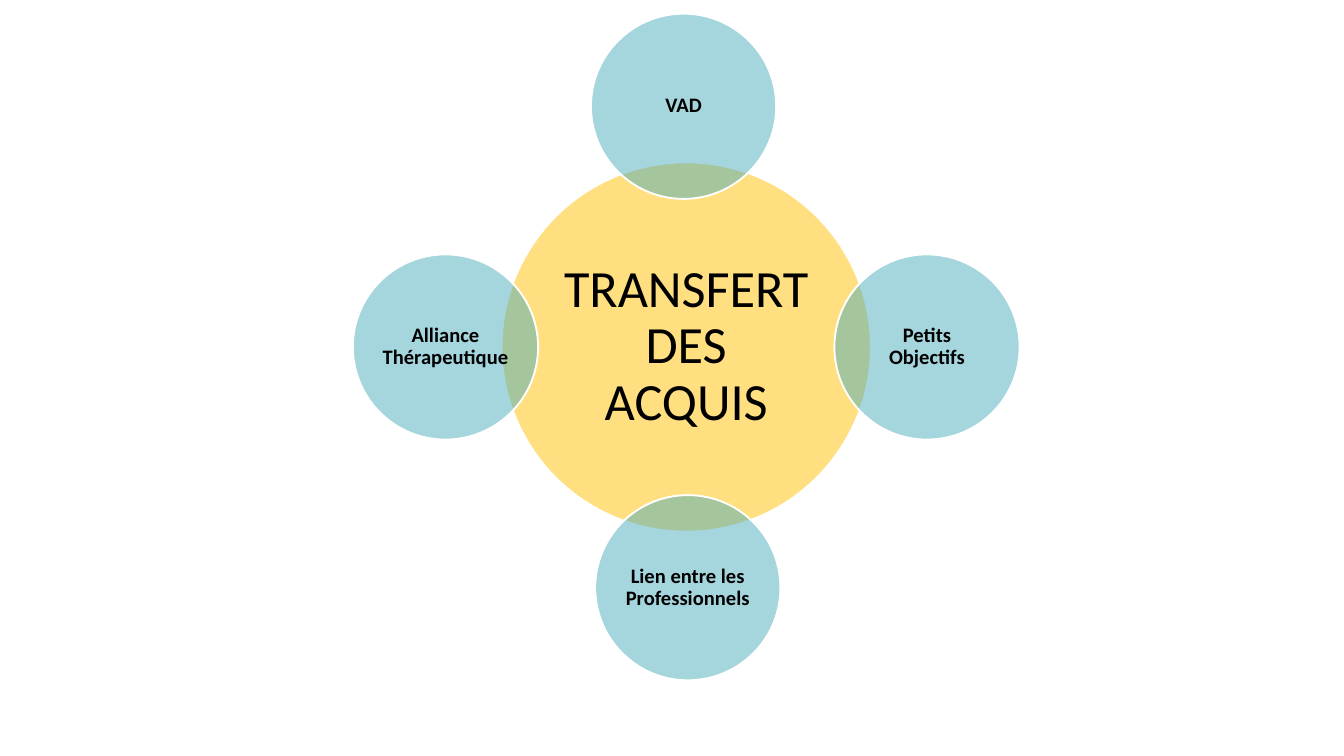
from lxml import etree
from pptx import Presentation
from pptx.dml.color import RGBColor
from pptx.enum import shapes, text
from pptx.oxml import ns
from pptx.util import Cm, Pt

YELLOW = RGBColor(0xFF, 0xC0, 0x00)
TEAL = RGBColor(0x4C, 0xAC, 0xBC)
WHITE = RGBColor(0xFF, 0xFF, 0xFF)
BLACK = RGBColor(0x00, 0x00, 0x00)

CENTER_X, CENTER_Y = 12.97, 6.56
ORBIT = 4.55
HUB_DIAMETER = 6.98
SATELLITE_DIAMETER = 3.5
SATELLITES = [
    ("VAD", -0.05, -ORBIT),
    ("Petits Objectifs", ORBIT, 0),
    ("Lien entre les Professionnels", 0.03, ORBIT),
    ("Alliance Thérapeutique", -ORBIT, 0),
]


class RadialDiagram:
    font_name = "Calibri"
    opacity = 50

    def __init__(self, slide):
        self.slide = slide

    def circle(self, label, x, y, diameter, color, size, bold, inset):
        shape = self.slide.shapes.add_shape(
            shapes.MSO_SHAPE.OVAL,
            Cm(x - diameter / 2), Cm(y - diameter / 2), Cm(diameter), Cm(diameter),
        )
        shape.shadow.inherit = False
        shape.fill.solid()
        shape.fill.fore_color.rgb = color
        self.make_translucent(shape)
        shape.line.color.rgb = WHITE
        shape.line.width = Pt(1)
        self.label(shape.text_frame, label, size, bold, inset)

    def make_translucent(self, shape):
        color = shape.fill._xPr.find(ns.qn("a:solidFill"))[0]
        etree.SubElement(color, ns.qn("a:alpha"), val=str(self.opacity * 1000))

    def label(self, frame, label, size, bold, inset):
        frame.text = label
        frame.word_wrap = True
        frame.vertical_anchor = text.MSO_ANCHOR.MIDDLE
        frame.margin_left = frame.margin_right = Cm(inset)
        frame.margin_top = frame.margin_bottom = Cm(inset)
        paragraph = frame.paragraphs[0]
        paragraph.alignment = text.PP_ALIGN.CENTER
        paragraph.line_spacing = 0.9
        for run in paragraph.runs:
            run.font.name = self.font_name
            run.font.size = Pt(size)
            run.font.bold = bold
            run.font.color.rgb = BLACK


def main():
    presentation = Presentation()
    presentation.slide_width = Cm(25.4)
    presentation.slide_height = Cm(14.29)
    slide = presentation.slides.add_slide(presentation.slide_layouts[6])

    diagram = RadialDiagram(slide)
    diagram.circle("TRANSFERT DES ACQUIS", CENTER_X, CENTER_Y, HUB_DIAMETER,
                   YELLOW, size=28, bold=False, inset=0.1)
    for label, dx, dy in SATELLITES:
        diagram.circle(label, CENTER_X + dx, CENTER_Y + dy, SATELLITE_DIAMETER,
                       TEAL, size=11, bold=True, inset=0.04)

    presentation.save("out.pptx")


if __name__ == "__main__":
    main()
